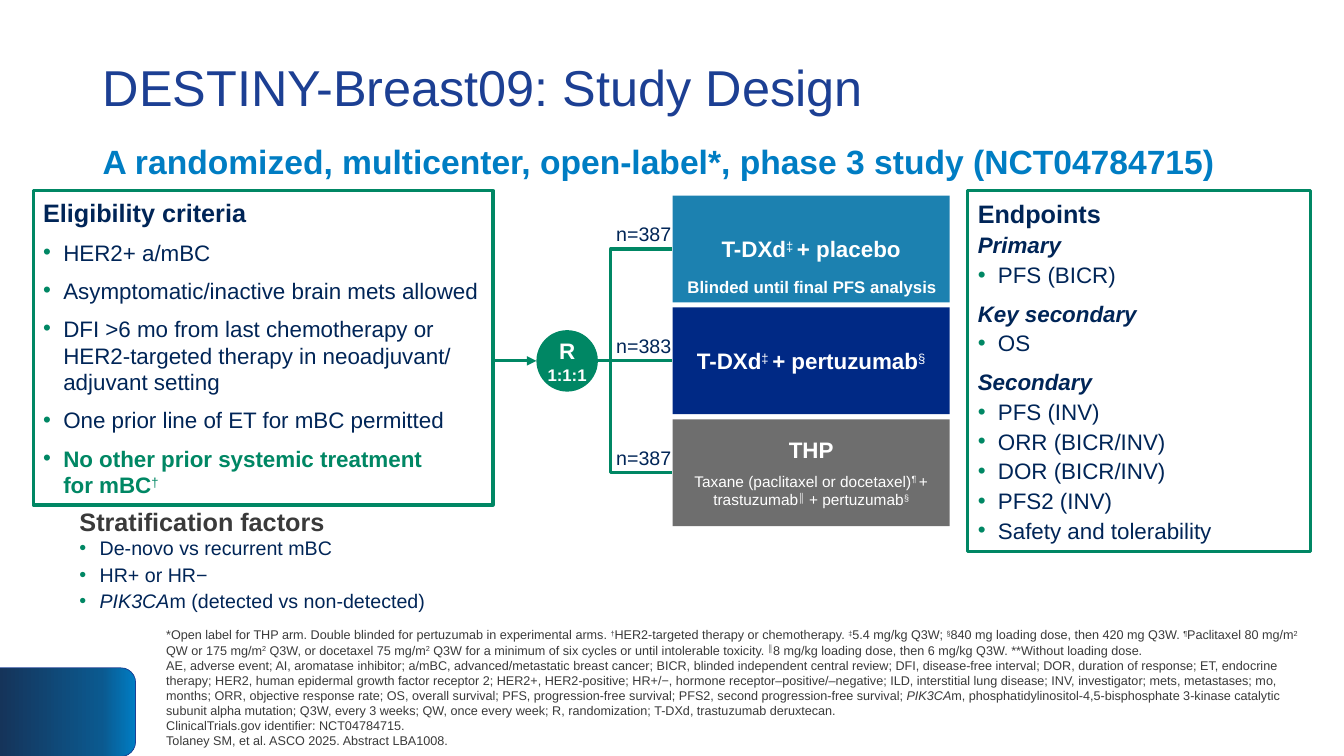
"""Build the DESTINY-Breast09 study design slide."""
from lxml.etree import SubElement
from pptx import Presentation
from pptx.dml.color import RGBColor
from pptx.enum.shapes import MSO_CONNECTOR as LINK, MSO_SHAPE as SHAPE
from pptx.enum.text import MSO_ANCHOR as ANCHOR, MSO_AUTO_SIZE as AUTO, PP_ALIGN as ALIGN
from pptx.oxml.ns import qn
from pptx.util import Inches, Pt

COLORS = {
    "blue": "1C3F93", "sky": "007DC3", "deep": "0B598F", "night": "15345A",
    "navy": "002557", "green": "008764", "gray": "3A3A3A", "white": "FFFFFF",
    "teal": "1C81B0", "royal": "002985", "stone": "6E6E6E",
}

# style: size, color, bold, italic, bullet, space before, space after
STYLES = {
    "title": (36, "blue", False, False, False, 0, 0),
    "lead": (24, "sky", True, False, False, 0, 0),
    "factor head": (18, "gray", True, False, False, 0, 0),
    "factor": (14, "navy", False, False, True, 0, 2),
    "note": (9, "gray", False, False, False, 0, 0),
    "rule head": (18, "navy", True, False, False, 0, 4),
    "rule": (16, "navy", False, False, True, 4, 4),
    "key rule": (16, "green", True, False, True, 4, 4),
    "end head": (18, "navy", True, False, False, 0, 1),
    "first level": (16, "navy", True, True, False, 1, 1),
    "level": (16, "navy", True, True, False, 7.6, 1),
    "end": (16, "navy", False, False, True, 1, 1),
    "arm": (16, "white", True, False, False, 0, 6),
    "drugs": (11, "white", False, False, False, 0, 6),
    "draw": (16, "white", True, False, False, 0, 0),
    "small": (12, "white", True, False, False, 0, 0),
    "count": (14, "navy", False, False, False, 0, 0),
}

TITLE = [("DESTINY-Breast09: Study Design", "title")]
LEAD = [("A randomized, multicenter, open-label*, phase 3 study (NCT04784715)", "lead")]
RULES = [
    ("Eligibility criteria", "rule head"),
    ("HER2+ a/mBC", "rule"),
    ("Asymptomatic/inactive brain mets allowed", "rule"),
    ("DFI >6 mo from last chemotherapy or HER2-targeted therapy in neoadjuvant/ "
     "adjuvant setting", "rule"),
    ("One prior line of ET for mBC permitted", "rule"),
    ("No other prior systemic treatment \nfor mBC^†^", "key rule"),
]
FACTORS = [
    ("Stratification factors", "factor head"),
    ("De-novo vs recurrent mBC", "factor"),
    ("HR+ or HR−", "factor"),
    ("_PIK3CA_m (detected vs non-detected)", "factor"),
]
ENDS = [
    ("Endpoints", "end head"),
    ("Primary", "first level"),
    ("PFS (BICR)", "end"),
    ("Key secondary", "level"),
    ("OS", "end"),
    ("Secondary", "level"),
    ("PFS (INV)", "end"),
    ("ORR (BICR/INV)", "end"),
    ("DOR (BICR/INV)", "end"),
    ("PFS2 (INV)", "end"),
    ("Safety and tolerability", "end"),
]
ARMS = [
    ("n=387", "teal", [("T-DXd^‡ ^+ placebo", "arm")]),
    ("n=383", "royal", [("T-DXd^‡ ^+ pertuzumab^§^", "arm")]),
    ("n=387", "stone", [
        ("THP", "arm"),
        ("Taxane (paclitaxel or docetaxel)^¶ ^+ trastuzumab^║^ + pertuzumab^§^", "drugs"),
    ]),
]
BLIND = [("Blinded until final PFS analysis", "small")]
DRAW = [("R", "draw"), ("1:1:1", "small")]
NOTES = [
    ("*Open label for THP arm. Double blinded for pertuzumab in experimental arms. "
     "^†^HER2-targeted therapy or chemotherapy. ^‡^5.4 mg/kg Q3W; ^§^840 mg loading dose, "
     "then 420 mg Q3W. ^¶^Paclitaxel 80 mg/m^2^ QW or 175 mg/m^2^ Q3W, or docetaxel "
     "75 mg/m^2^ Q3W for a minimum of six cycles or until intolerable toxicity. "
     "^║^8 mg/kg loading dose, then 6 mg/kg Q3W. **Without loading dose.", "note"),
    ("AE, adverse event; AI, aromatase inhibitor; a/mBC, advanced/metastatic breast cancer; "
     "BICR, blinded independent central review; DFI, disease-free interval; DOR, duration of "
     "response; ET, endocrine therapy; HER2, human epidermal growth factor receptor 2; HER2+, "
     "HER2-positive; HR+/−, hormone receptor–positive/–negative; ILD, interstitial lung "
     "disease; INV, investigator; mets, metastases; mo, months; ORR, objective response rate; "
     "OS, overall survival; PFS, progression-free survival; PFS2, second progression-free "
     "survival; _PIK3CA_m, phosphatidylinositol-4,5-bisphosphate 3-kinase catalytic subunit "
     "alpha mutation; Q3W, every 3 weeks; QW, once every week; R, randomization; T-DXd, "
     "trastuzumab deruxtecan.", "note"),
    ("ClinicalTrials.gov identifier: NCT04784715.", "note"),
    ("Tolaney SM, et al. ASCO 2025. Abstract LBA1008.", "note"),
]

ARM_X, ARM_Y, ARM_W, ARM_H, PITCH = 6.67, 1.94, 2.75, 1.06, 1.11
AXIS = ARM_Y + PITCH + ARM_H / 2
DISC_X, DISC = 5.32, 0.61
RULE_X, RULE_W = 0.33, 4.56


def tint(name):
    return RGBColor.from_string(COLORS[name])


def add_dot(par):
    props = par._p.get_or_add_pPr()
    props.set("marL", str(Inches(0.2)))
    props.set("indent", str(Inches(-0.2)))
    color = SubElement(props, qn("a:buClr"))
    SubElement(color, qn("a:srgbClr")).set("val", COLORS["green"])
    SubElement(props, qn("a:buFont")).set("typeface", "Arial")
    SubElement(props, qn("a:buChar")).set("char", "•")


def add_runs(par, text, size, color, bold, ital):
    """Set runs, with ^ around raised text and _ around italic text."""
    for i, chunk in enumerate(text.split("^")):
        for j, part in enumerate(chunk.split("_")):
            for k, line in enumerate(part.split("\n")):
                if k:
                    par.add_line_break()
                if not line:
                    continue
                run = par.add_run()
                run.text = line
                font = run.font
                font.name, font.size = "Arial", Pt(size)
                font.bold = bold and i % 2 == 0
                font.italic = ital or j % 2 == 1
                font.color.rgb = tint(color)
                if i % 2:
                    run._r.get_or_add_rPr().set("baseline", "30000")


def write(shape, lines, align=ALIGN.LEFT, anchor=ANCHOR.MIDDLE, wrap=True, lead=None):
    frame = shape.text_frame
    frame.word_wrap, frame.auto_size = wrap, AUTO.NONE
    frame.vertical_anchor = anchor
    for i, (text, style) in enumerate(lines):
        size, color, bold, ital, dot, before, after = STYLES[style]
        par = frame.add_paragraph() if i else frame.paragraphs[0]
        if dot:
            add_dot(par)
        par.alignment = align
        par.space_before, par.space_after = Pt(before), Pt(after)
        if lead:
            par.line_spacing = lead
        add_runs(par, text, size, color, bold, ital)


def add_box(slide, kind, box, fill=None, line=None, width=2.25):
    shape = slide.shapes.add_shape(kind, *map(Inches, box))
    shape.shadow.inherit = False
    if fill:
        shape.fill.solid()
        shape.fill.fore_color.rgb = tint(fill)
    else:
        shape.fill.background()
    if line:
        shape.line.color.rgb, shape.line.width = tint(line), Pt(width)
    else:
        shape.line.fill.background()
    return shape


def add_text(slide, box, lines, align=ALIGN.LEFT, anchor=ANCHOR.TOP, lead=None):
    write(slide.shapes.add_textbox(*map(Inches, box)), lines, align, anchor, lead=lead)


def add_link(slide, kind, *ends):
    link = slide.shapes.add_connector(kind, *map(Inches, ends))
    link.line.color.rgb, link.line.width = tint("green"), Pt(2.25)
    SubElement(link._element.spPr, qn("a:effectLst"))
    return link


def add_tab(slide):
    tab = add_box(slide, SHAPE.ROUND_2_SAME_RECTANGLE, (0.23, 6.39, 0.88, 1.35),
                  line="blue", width=0.5)
    tab.rotation = 90
    tab.fill.gradient()
    tab.fill.gradient_angle = 270
    stops = tab._element.spPr.find(".//" + qn("a:gsLst"))
    stops.clear()
    for place, color in ((0, "sky"), (25, "deep"), (100, "night")):
        stop = SubElement(stops, qn("a:gs"), pos=str(place * 1000))
        SubElement(stop, qn("a:srgbClr"), val=COLORS[color])


def add_arm(slide, i, count, color, lines):
    top = ARM_Y + i * PITCH
    mid = top + ARM_H / 2
    arm = add_box(slide, SHAPE.RECTANGLE, (ARM_X, top, ARM_W, ARM_H), color)
    write(arm, lines, ALIGN.CENTER)
    start = DISC_X + DISC
    if i == 1:
        add_link(slide, LINK.STRAIGHT, start, AXIS, ARM_X, mid).end_connect(arm, 1)
    else:
        link = add_link(slide, LINK.ELBOW, start, AXIS, ARM_X, mid)
        guides = link._element.spPr.find(".//" + qn("a:avLst"))
        SubElement(guides, qn("a:gd"), name="adj1", fmla="val 17300")
    add_text(slide, (5.9, mid - 0.32, 0.97, 0.34), [(count, "count")], ALIGN.CENTER)


def main():
    deck = Presentation()
    deck.slide_width, deck.slide_height = Inches(13.33), Inches(7.5)
    slide = deck.slides.add_slide(deck.slide_layouts[5])
    add_tab(slide)
    title = slide.shapes.title
    title.left, title.top, title.width, title.height = map(Inches, (0.92, 0.4, 11.5, 0.99))
    write(title, TITLE, lead=0.9)
    add_text(slide, (0.92, 1.39, 11.5, 0.61), LEAD, lead=0.9)
    add_text(slide, (0.69, 4.97, 6.06, 1.35), FACTORS)
    add_text(slide, (1.55, 6.31, 11.65, 1.03), NOTES, anchor=ANCHOR.MIDDLE)
    write(add_box(slide, SHAPE.RECTANGLE, (RULE_X, 1.89, RULE_W, 3.12), line="green"), RULES)
    write(add_box(slide, SHAPE.RECTANGLE, (9.6, 1.89, 3.4, 3.58), line="green"), ENDS)
    for i, arm in enumerate(ARMS):
        add_arm(slide, i, *arm)
    disc = add_box(slide, SHAPE.OVAL, (DISC_X, AXIS - DISC / 2, DISC, DISC), "green")
    write(disc, DRAW, ALIGN.CENTER, wrap=False)
    arrow = add_link(slide, LINK.STRAIGHT, RULE_X + RULE_W, AXIS, DISC_X, AXIS)
    SubElement(arrow.line._get_or_add_ln(), qn("a:tailEnd")).set("type", "triangle")
    add_text(slide, (6.69, 2.7, 2.73, 0.31), BLIND, ALIGN.CENTER)
    deck.save("out.pptx")


if __name__ == "__main__":
    main()
